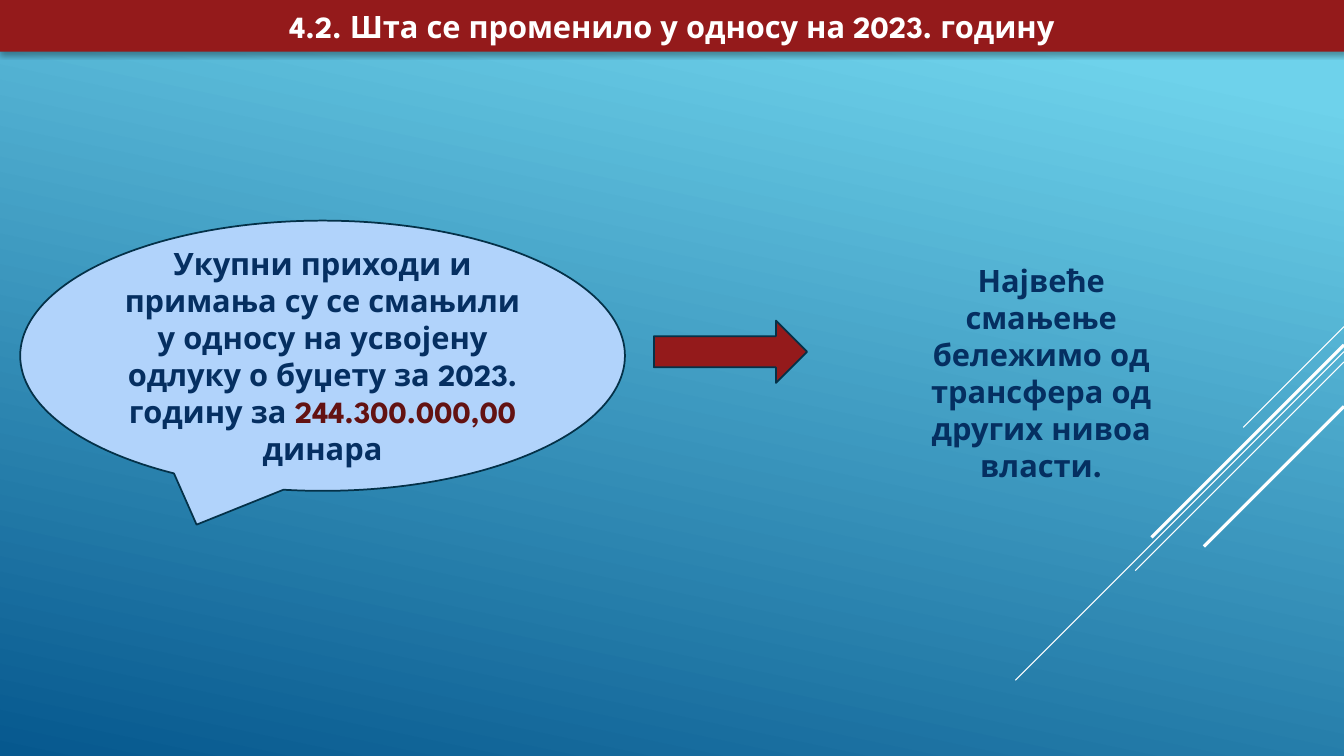
from lxml import etree
from pptx import Presentation
from pptx import util as u
from pptx.dml import color
from pptx.enum import shapes, text
from pptx.oxml import ns

FONT = "League Spartan"
WIDTH, HEIGHT = 33.87, 19.05
RED, NAVY, OUTLINE, WHITE = "941A1B", "052F61", "043148", "FFFFFF"


def paint(target, hex_color):
    target.rgb = color.RGBColor.from_string(hex_color)


def fill_shape(shape, hex_color):
    shape.fill.solid()
    paint(shape.fill.fore_color, hex_color)


def outline_shape(shape):
    paint(shape.line.color, OUTLINE)
    shape.line.width = u.Pt(1.25)


def place(shape, box):
    shape.left, shape.top, shape.width, shape.height = map(u.Cm, box)


def write(shape, runs):
    frame = shape.text_frame
    frame.word_wrap = True
    frame.auto_size = text.MSO_AUTO_SIZE.NONE
    frame.vertical_anchor = text.MSO_ANCHOR.MIDDLE
    paragraph = frame.paragraphs[0]
    paragraph.alignment = text.PP_ALIGN.CENTER
    for words, hex_color in runs:
        run = paragraph.add_run()
        run.text = words
        run.font.name = FONT
        run.font.size = u.Pt(22)
        run.font.bold = True
        paint(run.font.color, hex_color)


def add_preset(slide, kind, box):
    shape = slide.shapes.add_shape(kind, *map(u.Cm, box))
    shape.shadow.inherit = False
    return shape


def add_background(slide):
    fill = slide.background.fill
    fill.gradient()
    fill.gradient_angle = 258
    stops = zip(fill.gradient_stops, ((0.1, "6ED2EB"), (1, "06588E")))
    for stop, (position, hex_color) in stops:
        stop.position = position
        paint(stop.color, hex_color)


def add_diagonals(slide, right, diagonals):
    for top, run_length, weight in diagonals:
        ends = (right, top, right - run_length, top + run_length)
        line = slide.shapes.add_connector(
            shapes.MSO_CONNECTOR.STRAIGHT, *map(u.Cm, ends))
        paint(line.line.color, WHITE)
        line.line.width = u.Pt(weight)
        etree.SubElement(line._element.spPr, ns.qn("a:effectLst"))


def add_title(slide, box, words):
    title = slide.shapes.title
    place(title, box)
    geometry = etree.SubElement(
        title._element.spPr, ns.qn("a:prstGeom"), prst="roundRect")
    etree.SubElement(geometry, ns.qn("a:avLst"))
    fill_shape(title, RED)
    title.line.fill.background()
    effects = etree.SubElement(title._element.spPr, ns.qn("a:effectLst"))
    shadow = etree.SubElement(
        effects, ns.qn("a:outerShdw"), blurRad=str(u.Pt(3.5)),
        dist=str(u.Pt(2.2)), dir="5400000", algn="ctr", rotWithShape="0")
    shade = etree.SubElement(shadow, ns.qn("a:srgbClr"), val="000000")
    etree.SubElement(shade, ns.qn("a:alpha"), val="32000")
    write(title, [(words, WHITE)])


def add_callout(slide, box, runs):
    callout = add_preset(slide, shapes.MSO_SHAPE.OVAL_CALLOUT, box)
    fill_shape(callout, "B1D3FB")
    outline_shape(callout)
    write(callout, runs)


def add_arrow(slide, box):
    arrow = add_preset(slide, shapes.MSO_SHAPE.RIGHT_ARROW, box)
    fill_shape(arrow, RED)
    outline_shape(arrow)


def add_explanation(slide, box, words):
    drop = add_preset(slide, shapes.MSO_SHAPE.TEAR, box)
    drop.fill.background()
    drop.line.fill.background()
    write(drop, [(words, NAVY)])


def main():
    presentation = Presentation()
    presentation.slide_width = u.Cm(WIDTH)
    presentation.slide_height = u.Cm(HEIGHT)
    slide = presentation.slides.add_slide(presentation.slide_layouts[5])
    add_background(slide)
    add_diagonals(slide, WIDTH, [
        (8.23, 2.54, 0.75),
        (8.86, 8.28, 0.75),
        (9.12, 5.26, 0.75),
        (8.69, 4.85, 2.25),
        (10.24, 3.53, 2.25),
    ])
    add_title(slide, (0, 0, WIDTH, 1.3),
              "4.2. Шта се променило у односу на 2023. годину")
    add_callout(slide, (0.51, 5.56, 15.24, 6.81), [
        ("Укупни приходи и примања су се смањили у односу на усвојену "
         "одлуку о буџету за 2023. годину за ", NAVY),
        ("244.300.000,00 ", "631212"),
        ("динара", NAVY),
    ])
    add_arrow(slide, (16.48, 8.08, 3.86, 1.57))
    add_explanation(
        slide, (21.11, 5.31, 10.26, 8.15),
        "Највеће смањење бележимо од трансфера од других нивоа власти.")
    presentation.save("out.pptx")


if __name__ == "__main__":
    main()
